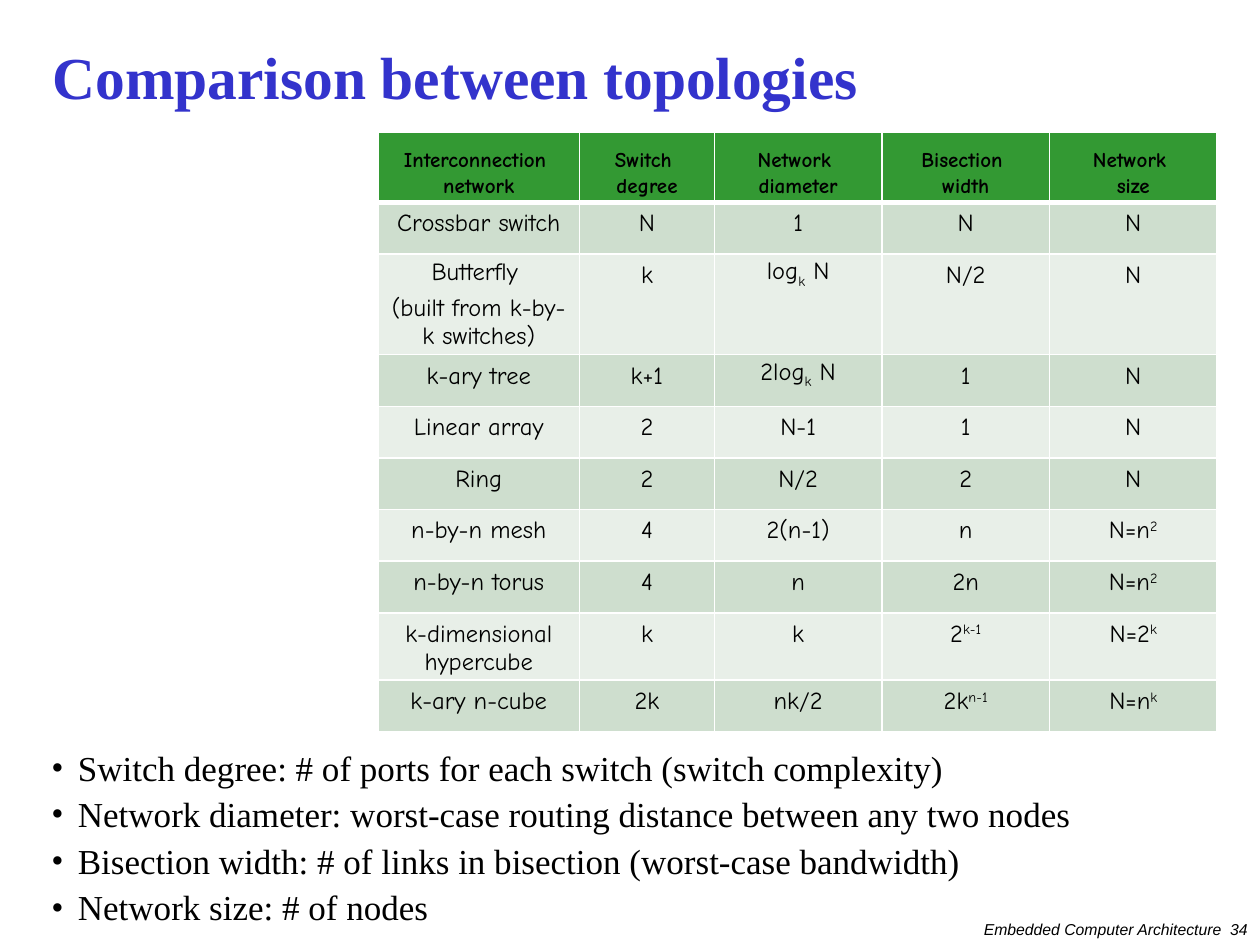
from lxml.etree import SubElement
from pptx import Presentation
from pptx.dml.color import RGBColor
from pptx.enum.text import MSO_ANCHOR as Anchor, PP_ALIGN as Align
from pptx.oxml.ns import qn
from pptx.util import Inches, Pt

COLORS = {"title": "3333CC", "text": "000000", "header": "339933",
          "odd": "CEDECE", "even": "E8EFE8", "border": "FFFFFF"}
SERIF, SANS, HAND = "Times New Roman", "Arial", "Comic Neue"

# "|" parts the runs of a cell; a run led by "_" is subscript, by "^" superscript.
BASELINES = {"_": "-25000", "^": "30000"}
COLUMN_WIDTHS = [1.6, 1.07, 1.33, 1.33, 1.33]
ROW_HEIGHT = 0.41
ROWS = [
    ["Interconnection \nnetwork", "Switch \ndegree", "Network \ndiameter",
     "Bisection \nwidth", "Network \nsize"],
    ["Crossbar switch", "N", "1", "N", "N"],
    ["Butterfly \n(built from k-by-k switches)", "k", "log|_k| N", "N/2", "N"],
    ["k-ary tree", "k+1", "2log|_k| N", "1", "N"],
    ["Linear array", "2", "N-1", "1", "N"],
    ["Ring", "2", "N/2", "2", "N"],
    ["n-by-n mesh", "4", "2(n-1)", "n", "N=n|^2"],
    ["n-by-n torus", "4", "n", "2n", "N=n|^2"],
    ["k-dimensional hypercube", "k", "k", "2|^k-1", "N=2|^k"],
    ["k-ary n-cube", "2k", "nk/2", "2k|^n-1", "N=n|^k"],
]
DEFINITIONS = [
    "Switch degree: # of ports for each switch (switch complexity)",
    "Network diameter: worst-case routing distance between any two nodes",
    "Bisection width: # of links in bisection (worst-case bandwidth)",
    "Network size: # of nodes",
]


def style_font(span, name, size, color="text", bold=False, italic=False):
    font = span.font
    font.name, font.size = name, Pt(size)
    font.bold, font.italic = bold, italic
    font.color.rgb = RGBColor.from_string(COLORS[color])


def add_text(page, left, top, width, height, text):
    box = page.shapes.add_textbox(*map(Inches, (left, top, width, height)))
    box.text_frame.word_wrap = True
    box.text_frame.text = text
    return box.text_frame


deck = Presentation()
deck.slide_width, deck.slide_height = Inches(10), Inches(7.5)
page = deck.slides.add_slide(deck.slide_layouts[6])

# Footer
footer = add_text(page, 7.13, 7.25, 2.87, 0.25, "Embedded Computer Architecture  34")
footer.margin_right = Inches(0.1)
para = footer.paragraphs[0]
para.alignment = Align.RIGHT
style_font(para.runs[0], SANS, 9, italic=True)
footer.margin_right = Inches(0.1)

# Title
title = add_text(page, 0.32, 0.25, 9.35, 0.8, "Comparison between topologies")
title.vertical_anchor = Anchor.MIDDLE
title.paragraphs[0].line_spacing = 0.8
style_font(title.paragraphs[0].runs[0], SERIF, 34, "title", bold=True)

# Definitions
body = add_text(page, 0.31, 5.91, 9.39, 1.18, "\n".join(DEFINITIONS))
for para in body.paragraphs:
    para.line_spacing = 0.9
    para.space_before = Pt(5)
    style_font(para.runs[0], SERIF, 20)
    props = para._p.get_or_add_pPr()
    props.set("marL", str(Inches(0.21)))
    props.set("indent", str(-Inches(0.21)))
    SubElement(props, qn("a:buFont"), typeface=SERIF)
    SubElement(props, qn("a:buChar"), char="•")

# Comparison table
table = page.shapes.add_table(
    len(ROWS), len(COLUMN_WIDTHS), Inches(3), Inches(1.05),
    Inches(sum(COLUMN_WIDTHS)), Inches(ROW_HEIGHT * len(ROWS))).table
for column, width in zip(table.columns, COLUMN_WIDTHS):
    column.width = Inches(width)

for row_index, row in enumerate(ROWS):
    table.rows[row_index].height = Inches(ROW_HEIGHT)
    is_header = row_index == 0
    fill = "header" if is_header else "odd" if row_index % 2 else "even"
    for column_index, content in enumerate(row):
        cell = table.cell(row_index, column_index)
        cell.margin_left = cell.margin_right = Inches(0.08)
        cell.margin_top = Inches(0.11 if is_header else 0.06)
        cell.margin_bottom = Inches(0.03)
        cell.vertical_anchor = Anchor.BOTTOM if is_header else Anchor.TOP

        for side in ("lnL", "lnR", "lnT", "lnB"):
            heavy = (is_header and side == "lnB") or (row_index == 1 and side == "lnT")
            line = SubElement(cell._tc.get_or_add_tcPr(), qn(f"a:{side}"),
                              w=str(Pt(3 if heavy else 1)))
            paint = SubElement(line, qn("a:solidFill"))
            SubElement(paint, qn("a:srgbClr"), val=COLORS["border"])
        cell.fill.solid()
        cell.fill.fore_color.rgb = RGBColor.from_string(COLORS[fill])

        lines = content.split("\n")
        cell.text_frame.text = "\n".join(lines)
        for para, text in zip(cell.text_frame.paragraphs, lines):
            para.alignment = Align.CENTER
            para.line_spacing = Pt(15 if is_header else 14 if text == "Butterfly " else 16)
            if not is_header:
                para.space_after = Pt(5)
            first, *others = text.split("|")
            para.runs[0].text = first
            for part in others:
                span = para.add_run()
                span.text = part.lstrip("_^")
                if part[0] in BASELINES:
                    span.font._element.set("baseline", BASELINES[part[0]])
            for span in para.runs:
                style_font(span, HAND, 12 if is_header else 14, bold=is_header)

deck.save("out.pptx")
